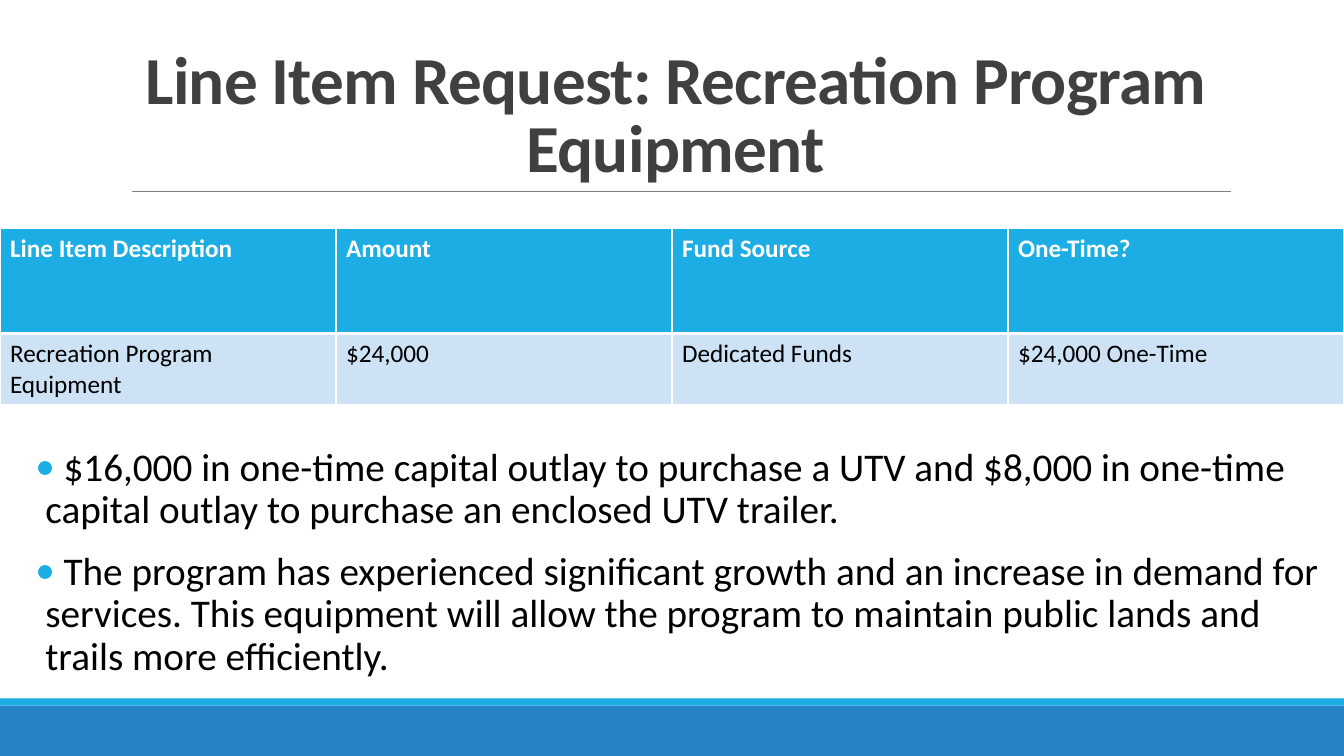
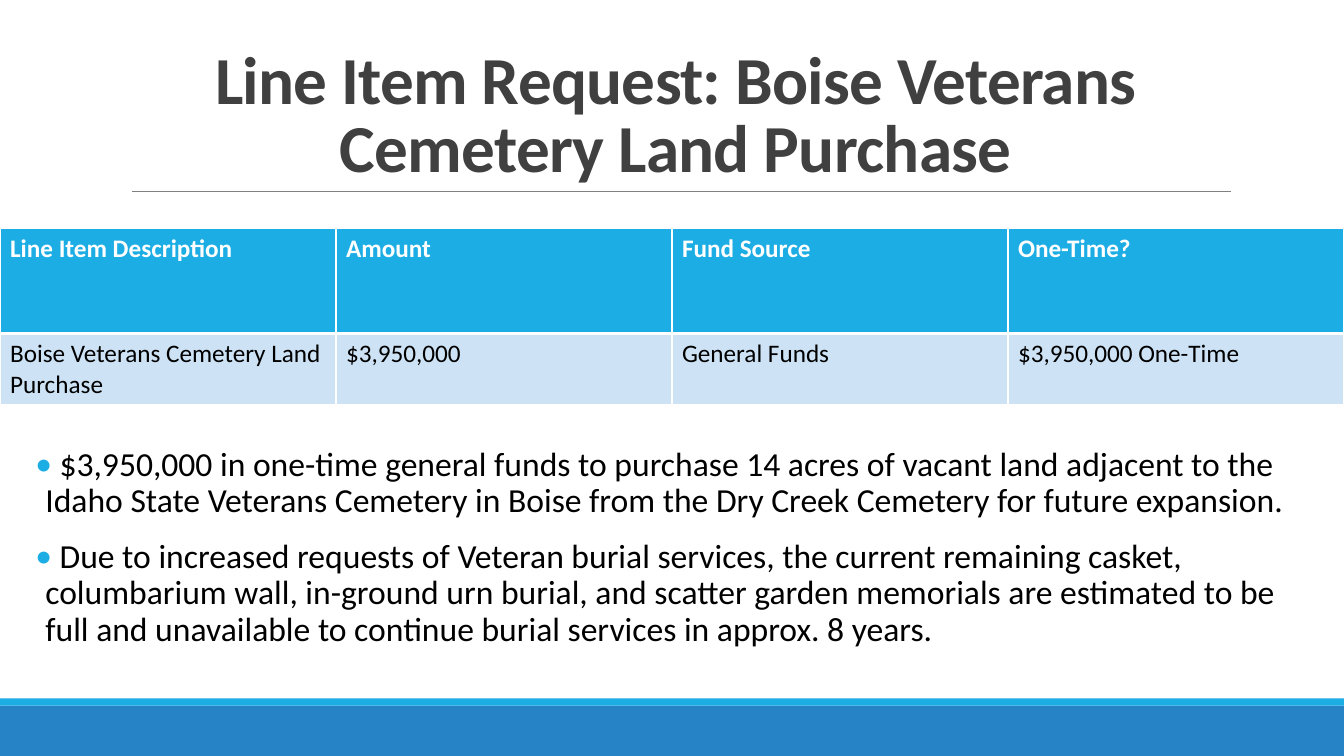
from lxml.etree import SubElement
from pptx import Presentation
from pptx.dml.color import RGBColor
from pptx.enum.shapes import MSO_CONNECTOR, MSO_SHAPE
from pptx.enum.text import MSO_ANCHOR, PP_ALIGN
from pptx.oxml.ns import qn
from pptx.util import Inches, Pt

FONT = "Calibri"
WHITE = RGBColor(0xFF, 0xFF, 0xFF)
BLACK = RGBColor(0x00, 0x00, 0x00)
TITLE_GRAY = RGBColor(0x40, 0x40, 0x40)
RULE_GRAY = RGBColor(0x80, 0x80, 0x80)
BRIGHT_BLUE = RGBColor(0x1C, 0xAD, 0xE4)
FOOTER_BLUE = RGBColor(0x26, 0x83, 0xC6)
PALE_BLUE = RGBColor(0xCD, 0xE3, 0xF5)

SLIDE_WIDTH = Inches(13.33)
TABLE_HEADER = ["Line Item Description", "Amount", "Fund Source", "One-Time?"]
ROW_HEIGHTS = [Inches(1.04), Inches(0.7)]

REQUESTS = [
    {
        "title": "Line Item Request: Recreation Program Equipment",
        "values": ["Recreation Program Equipment", "$24,000",
                   "Dedicated Funds", "$24,000 One-Time"],
        "bullets": [
            " $16,000 in one-time capital outlay to purchase a UTV and $8,000 in "
            "one-time capital outlay to purchase an enclosed UTV trailer.",
            " The program has experienced significant growth and an increase in "
            "demand for services. This equipment will allow the program to maintain "
            "public lands and trails more efficiently.",
        ],
        "bullet_size": 28,
    },
    {
        "title": "Line Item Request: Boise Veterans Cemetery Land Purchase",
        "values": ["Boise Veterans Cemetery Land Purchase", "$3,950,000",
                   "General Funds", "$3,950,000 One-Time"],
        "bullets": [
            " $3,950,000 in one-time general funds to purchase 14 acres of vacant "
            "land adjacent to the Idaho State Veterans Cemetery in Boise from the "
            "Dry Creek Cemetery for future expansion.",
            " Due to increased requests of Veteran burial services, the current "
            "remaining casket, columbarium wall, in-ground urn burial, and scatter "
            "garden memorials are estimated to be \n"
            "full and unavailable to continue burial services in approx. 8 years.",
        ],
        "bullet_size": 24,
    },
]


def format_runs(paragraph, size, color, bold=False):
    for run in paragraph.runs:
        run.font.name = FONT
        run.font.size = Pt(size)
        run.font.bold = bold
        run.font.color.rgb = color


def add_band(slide, top, height, color):
    band = slide.shapes.add_shape(
        MSO_SHAPE.RECTANGLE, 0, Inches(top), SLIDE_WIDTH, Inches(height))
    band.shadow.inherit = False
    band.fill.solid()
    band.fill.fore_color.rgb = color
    band.line.fill.background()


def add_frame(slide):
    """Draw the footer bands and the rule under the title."""
    add_band(slide, 7, 0.5, FOOTER_BLUE)
    add_band(slide, 6.93, 0.07, BRIGHT_BLUE)
    rule = slide.shapes.add_connector(
        MSO_CONNECTOR.STRAIGHT, Inches(1.31), Inches(1.9), Inches(12.21), Inches(1.9))
    rule.line.color.rgb = RULE_GRAY
    rule.line.width = Pt(0.5)
    SubElement(rule._element.spPr, qn("a:effectLst"))


def add_title(slide, text):
    box = slide.shapes.add_textbox(Inches(1.2), Inches(0.31), Inches(11), Inches(1.59))
    text_frame = box.text_frame
    text_frame.word_wrap = True
    text_frame.vertical_anchor = MSO_ANCHOR.BOTTOM
    text_frame.text = text
    paragraph = text_frame.paragraphs[0]
    paragraph.alignment = PP_ALIGN.CENTER
    paragraph.line_spacing = 0.85
    format_runs(paragraph, 48, TITLE_GRAY, bold=True)
    for run in paragraph.runs:
        run.font._element.set("spc", "-50")


def set_bullet(paragraph):
    properties = paragraph._p.get_or_add_pPr()
    properties.set("marL", str(Inches(0.1)))
    properties.set("indent", str(-Inches(0.1)))
    bullet_color = SubElement(properties, qn("a:buClr"))
    SubElement(bullet_color, qn("a:srgbClr"), val=str(BRIGHT_BLUE))
    SubElement(properties, qn("a:buFont"), typeface=FONT)
    SubElement(properties, qn("a:buChar"), char="•")


def add_bullets(slide, bullets, size):
    box = slide.shapes.add_textbox(Inches(0.35), Inches(4.39), Inches(12.98), Inches(2.44))
    text_frame = box.text_frame
    text_frame.word_wrap = True
    text_frame.margin_left = text_frame.margin_right = 0
    for index, text in enumerate(bullets):
        paragraph = text_frame.add_paragraph() if index else text_frame.paragraphs[0]
        paragraph.text = text
        paragraph.line_spacing = 0.9
        paragraph.space_before = Pt(12)
        paragraph.space_after = Pt(2)
        set_bullet(paragraph)
        format_runs(paragraph, size, BLACK)


def set_borders(cell, top, bottom):
    """Give the cell white borders; top and bottom are widths in points."""
    properties = cell._tc.get_or_add_tcPr()
    for side, width in (("L", 1), ("R", 1), ("T", top), ("B", bottom)):
        border = SubElement(properties, qn(f"a:ln{side}"), w=str(Pt(width)))
        fill = SubElement(border, qn("a:solidFill"))
        SubElement(fill, qn("a:srgbClr"), val=str(WHITE))


def add_request_table(slide, values):
    rows = [TABLE_HEADER, values]
    table = slide.shapes.add_table(
        len(rows), len(TABLE_HEADER), 0, Inches(2.27), SLIDE_WIDTH, sum(ROW_HEIGHTS)).table
    table.horz_banding = False
    for row_index, texts in enumerate(rows):
        table.rows[row_index].height = ROW_HEIGHTS[row_index]
        is_header = row_index == 0
        for column_index, text in enumerate(texts):
            cell = table.cell(row_index, column_index)
            cell.text_frame.text = text
            format_runs(cell.text_frame.paragraphs[0], 18,
                        WHITE if is_header else BLACK, bold=is_header)
            set_borders(cell, top=1 if is_header else 3, bottom=3 if is_header else 1)
            cell.fill.solid()
            cell.fill.fore_color.rgb = BRIGHT_BLUE if is_header else PALE_BLUE


def main():
    presentation = Presentation()
    presentation.slide_width = SLIDE_WIDTH
    presentation.slide_height = Inches(7.5)
    for request in REQUESTS:
        slide = presentation.slides.add_slide(presentation.slide_layouts[6])
        add_frame(slide)
        add_title(slide, request["title"])
        add_bullets(slide, request["bullets"], request["bullet_size"])
        add_request_table(slide, request["values"])
    presentation.save("out.pptx")


if __name__ == "__main__":
    main()
